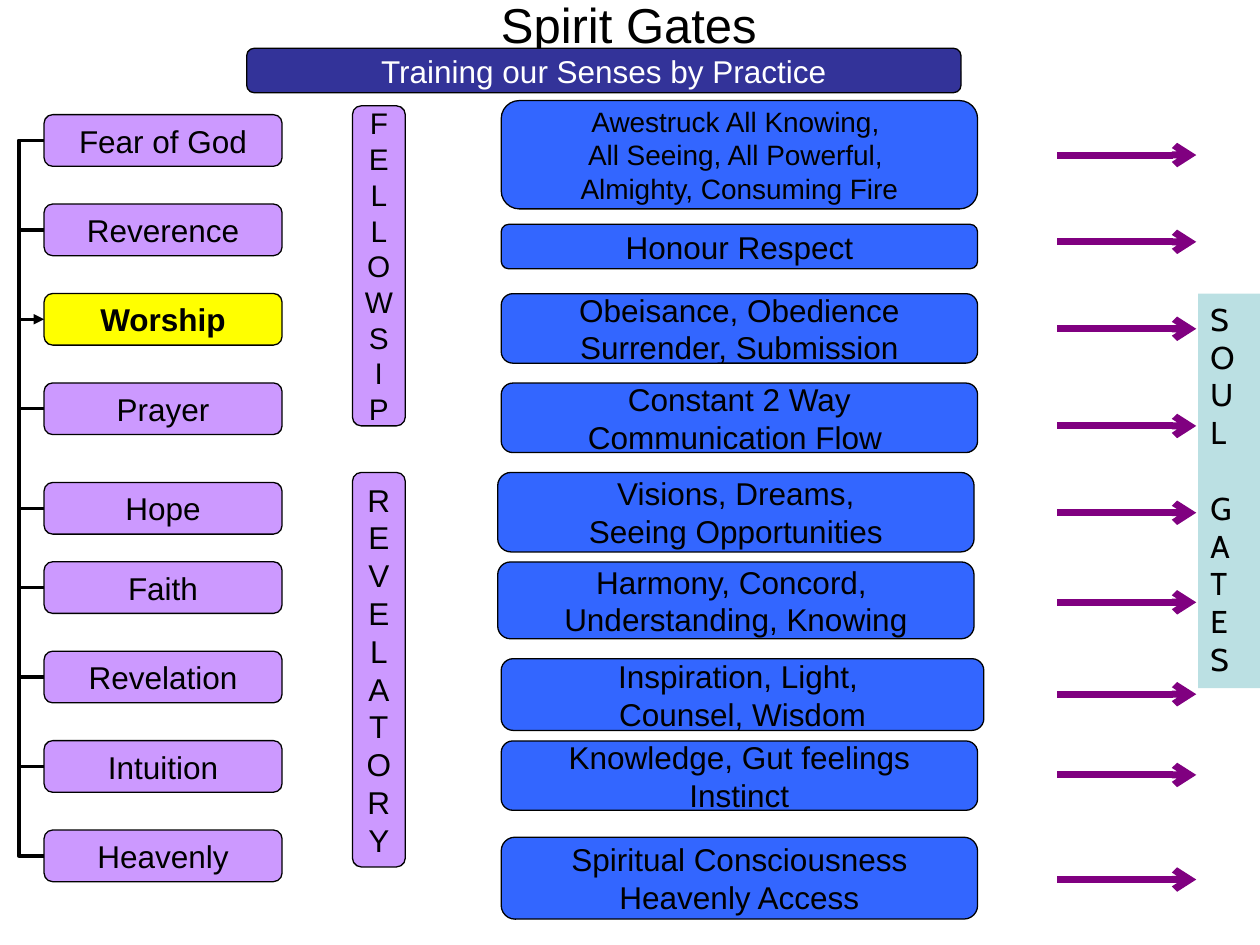
import copy
from dataclasses import dataclass

import pptx
import pptx.dml.color
import pptx.enum.shapes
import pptx.enum.text
import pptx.oxml
import pptx.oxml.ns
import pptx.util

Pt = pptx.util.Pt
qn = pptx.oxml.ns.qn
SHAPE = pptx.enum.shapes.MSO_SHAPE
LINK = pptx.enum.shapes.MSO_CONNECTOR
ALIGN = pptx.enum.text.PP_ALIGN
ANCHOR = pptx.enum.text.MSO_ANCHOR
AUTO = pptx.enum.text.MSO_AUTO_SIZE


@dataclass(frozen=True)
class Theme:
    black: str = "000000"
    white: str = "FFFFFF"
    lilac: str = "CC99FF"
    yellow: str = "FFFF00"
    blue: str = "3366FF"
    navy: str = "333399"
    purple: str = "800080"
    teal: str = "BBE0E3"
    font: str = "Arial"
    soul_font: str = "Cabin"
    title: int = 28
    body: int = 18
    tall: int = 17
    small: int = 16


T = Theme()

GATES = ["Fear of God", "Reverence", "Worship", "Prayer", "Hope",
         "Faith", "Revelation", "Intuition", "Heavenly"]
GATE_LEFT, GATE_TOP, GATE_PITCH = 25.2, 65.5, 51.1
GATE_W, GATE_H = 136, 29.5
HOPE_SHIFT = 5.8
TRUNK_X = 10.5

# text, left, top, width, height, type size
MEANINGS = [
    ("Awestruck All Knowing, \nAll Seeing, All Powerful, \nAlmighty, Consuming Fire",
     286.4, 57.5, 272.2, 61.9, T.small),
    ("Honour Respect", 286.4, 128.2, 272.2, 25.4, T.body),
    ("Obeisance, Obedience\nSurrender, Submission", 286.4, 167.8, 272.2, 39.7, T.body),
    ("Constant 2 Way\nCommunication Flow ", 286.4, 218.9, 272.2, 39.7, T.body),
    ("Visions, Dreams,\nSeeing Opportunities", 284.4, 270, 272.2, 45.4, T.body),
    ("Harmony, Concord, \nUnderstanding, Knowing", 284.4, 321.1, 272.2, 43.9, T.body),
    ("Inspiration, Light, \nCounsel, Wisdom", 286.4, 376.4, 275.8, 41, T.body),
    ("Knowledge, Gut feelings\nInstinct", 286.4, 423.4, 272.2, 39.6, T.body),
    ("Spiritual Consciousness\nHeavenly Access", 286.4, 478.4, 272.2, 46.8, T.body),
]
ARROW_YS = [88.6, 138.2, 187.9, 243.4, 293, 344.2, 396.7, 442.8, 502.6]


def rgb(value):
    return pptx.dml.color.RGBColor.from_string(value)


def write(p, text, size=T.body, color=T.black, font=T.font, bold=False,
          align=ALIGN.CENTER):
    """Fill a paragraph; line breaks take the same format as the text."""
    p.text = text
    p.alignment = align
    for r in p.runs:
        r.font.size = Pt(size)
        r.font.name = font
        r.font.bold = bold
        r.font.color.rgb = rgb(color)
    props = p._p.find(qn("a:r")).find(qn("a:rPr"))
    for br in p._p.findall(qn("a:br")):
        br.insert(0, copy.deepcopy(props))


def clear_insets(tf):
    tf.margin_left = tf.margin_right = tf.margin_top = tf.margin_bottom = 0
    tf.vertical_anchor = ANCHOR.MIDDLE


def add_title(s, text):
    sp = s.shapes.title
    sp.left, sp.top, sp.width, sp.height = Pt(35.3), 0, Pt(648), Pt(27.4)
    tf = sp.text_frame
    clear_insets(tf)
    tf.auto_size = AUTO.NONE
    write(tf.paragraphs[0], text, size=T.title)


def add_box(s, text, left, top, width, height, fill, **fmt):
    sp = s.shapes.add_shape(SHAPE.FLOWCHART_ALTERNATE_PROCESS,
                            Pt(left), Pt(top), Pt(width), Pt(height))
    sp.shadow.inherit = False
    sp.fill.solid()
    sp.fill.fore_color.rgb = rgb(fill)
    sp.line.color.rgb = rgb(T.black)
    sp.line.width = Pt(0.75)
    tf = sp.text_frame
    clear_insets(tf)
    tf.word_wrap = False
    write(tf.paragraphs[0], text, **fmt)
    return sp


def add_line(s, x1, y1, x2, y2, color, width, head=None, kind=LINK.STRAIGHT):
    cx = s.shapes.add_connector(kind, Pt(x1), Pt(y1), Pt(x2), Pt(y2))
    cx.line.color.rgb = rgb(color)
    cx.line.width = Pt(width)
    if head:
        pptx.oxml.ns  # line ends live in the outline's XML
        end = cx.line._get_or_add_ln().makeelement(qn("a:tailEnd"), {"type": head})
        cx.line._get_or_add_ln().append(end)
    spPr = cx._element.spPr
    spPr.append(spPr.makeelement(qn("a:effectLst"), {}))
    return cx


def add_trunk(s, top, bottom):
    """Bracket that links the first and the last gate."""
    reach = 0.72
    cx = add_line(s, GATE_LEFT, top, GATE_LEFT + reach, bottom, T.black, 2,
                  kind=LINK.ELBOW)
    bend = round((TRUNK_X - GATE_LEFT) / reach * 100000)
    guides = cx._element.spPr.find(qn("a:prstGeom")).get_or_add_avLst()
    guides.append(guides.makeelement(
        qn("a:gd"), {"name": "adj1", "fmla": f"val {bend}"}))


def add_gates(s):
    tops = [GATE_TOP + GATE_PITCH * i for i in range(len(GATES))]
    tops[GATES.index("Hope")] += HOPE_SHIFT
    middles = [top + GATE_H / 2 for top in tops]
    add_trunk(s, middles[0], middles[-1])
    for name, top, middle in zip(GATES, tops, middles):
        chosen = name == "Worship"
        box = add_box(s, name, GATE_LEFT, top, GATE_W, GATE_H,
                      T.yellow if chosen else T.lilac, bold=chosen)
        if name not in (GATES[0], GATES[-1]):
            tick = add_line(s, TRUNK_X, middle, GATE_LEFT, middle, T.black, 2,
                            head="triangle" if chosen else None)
            tick.end_connect(box, 1)


def add_soul_panel(s):
    sp = s.shapes.add_shape(SHAPE.RECTANGLE, Pt(684.6), Pt(167.8), Pt(35.4), Pt(225.4))
    sp.shadow.inherit = False
    sp.fill.solid()
    sp.fill.fore_color.rgb = rgb(T.teal)
    sp.line.fill.background()
    tf = sp.text_frame
    tf.word_wrap = True
    tf.vertical_anchor = ANCHOR.TOP
    fmt = dict(font=T.soul_font, align=ALIGN.LEFT)
    write(tf.paragraphs[0], "\n".join("SOUL"), **fmt)
    p = tf.add_paragraph()
    write(p, "\n".join("GATES"), **fmt)
    p.space_before = Pt(21.6)


def main():
    prs = pptx.Presentation()
    prs.slide_width, prs.slide_height = Pt(720), Pt(540)
    s = prs.slides.add_slide(prs.slide_layouts.get_by_name("Title Only"))
    add_title(s, "Spirit Gates")
    add_box(s, "\n".join("FELLOWSIP"), 201.4, 60.5, 30.2, 182.9, T.lilac, size=T.tall)
    add_box(s, "\n".join("REVELATORY"), 201.4, 270, 30.2, 225.4, T.lilac)
    for text, left, top, width, height, size in MEANINGS:
        add_box(s, text, left, top, width, height, T.blue, size=size)
    add_box(s, "Training our Senses by Practice", 141, 27.6, 408.2, 25.4,
            T.navy, color=T.white)
    add_gates(s)
    for y in ARROW_YS:
        add_line(s, 604.2, y, 683.6, y, T.purple, 4, head="arrow")
    add_soul_panel(s)
    prs.save("out.pptx")


if __name__ == "__main__":
    main()
